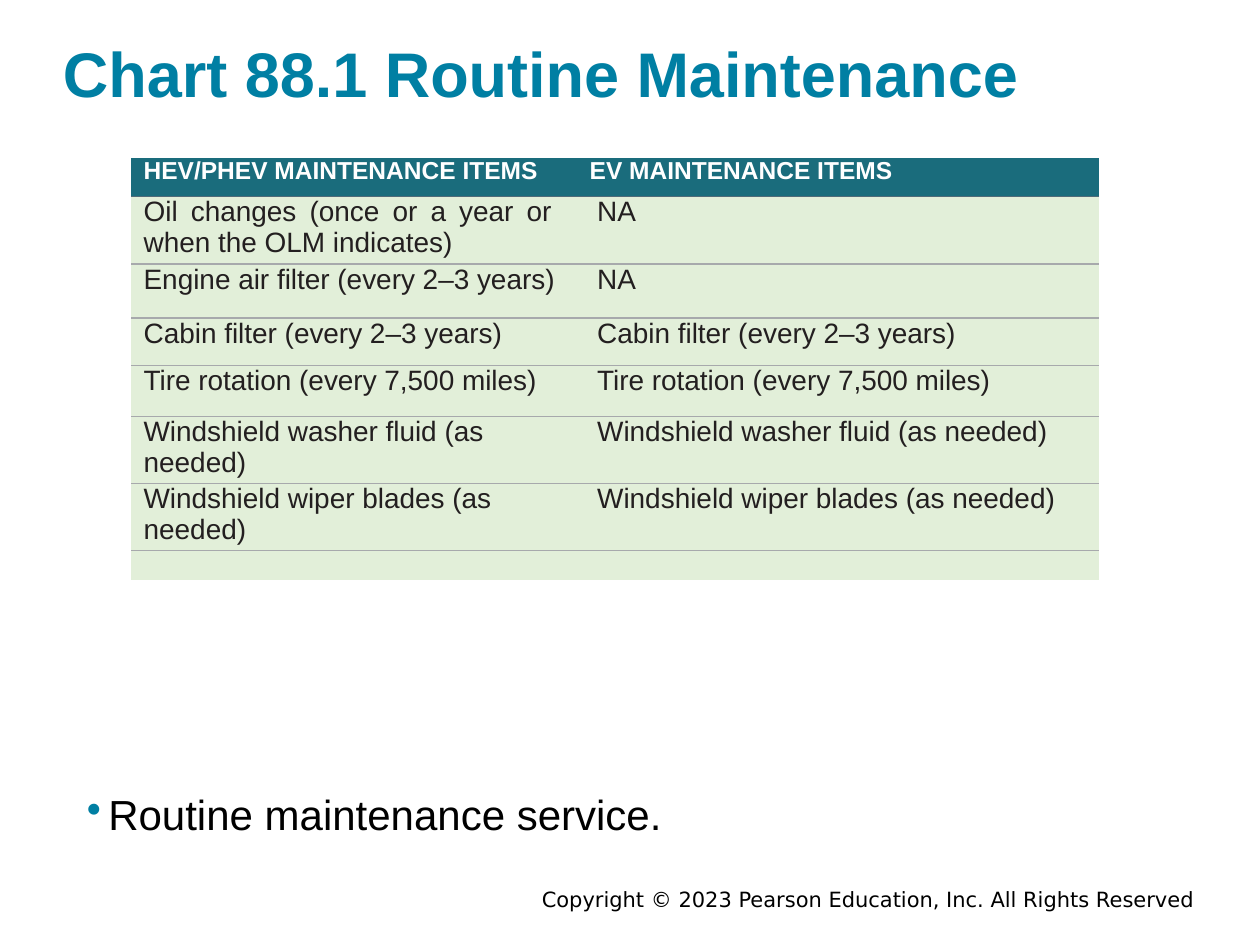
from lxml.etree import SubElement as Sub
from pptx import Presentation
from pptx.dml.color import RGBColor as RGB
from pptx.enum.text import MSO_ANCHOR as Anchor, PP_ALIGN as Align
from pptx.oxml import parse_xml
from pptx.oxml.ns import nsdecls, qn
from pptx.util import Inches, Pt

HUES = {"blue": "007FA3", "teal": "1A6C7C", "mint": "E2EFD9", "slate": "4F6B79",
        "gray": "A7A9AC", "ink": "231F20", "white": "FFFFFF", "black": "000000"}
PLAIN = "{2D5ABB26-0587-4C30-8999-92F81FD0307C}"
HEAD = ["HEV/PHEV MAINTENANCE ITEMS", "EV MAINTENANCE ITEMS"]
CABIN = "Cabin filter (every 2–3 years)"
TIRES = "Tire rotation (every 7,500 miles)"
FLUID = "Windshield washer fluid (as needed)"
WIPERS = "Windshield wiper blades (as needed)"
ITEMS = [
    ["Oil changes (once or a year or when the OLM indicates)", "NA"],
    ["Engine air filter (every 2–3 years)", "NA"],
    *([item, item] for item in (CABIN, TIRES, FLUID, WIPERS)),
    ["", ""],
]
COLS = [35.9, 40.9]
ROWS = [4.13, 7.13, 5.73, 5, 5.4, 7.07, 7.07, 3.13]


class Deck:
    """Lengths are in a grid of 100 columns by 100 rows over the slide."""

    def __init__(self, wide=10, high=7.5, font="Arial"):
        self.file = Presentation()
        self.file.slide_width, self.file.slide_height = Inches(wide), Inches(high)
        self.col, self.row = Inches(wide) / 100, Inches(high) / 100
        self.font = font
        self.slide = self.file.slides.add_slide(self.file.slide_layouts[6])

    def area(self, x, y, w, h):
        return [int(n) for n in (x * self.col, y * self.row, w * self.col, h * self.row)]

    def run(self, para, words, size, hue, bold=False, font=None):
        run = para.add_run()
        run.text = words
        run.font.name, run.font.size, run.font.bold = font or self.font, Pt(size), bold
        run.font.color.rgb = RGB.from_string(HUES[hue])

    def text(self, box, words, size, hue, side=0, align=Align.LEFT, dot=None, **style):
        frame = self.slide.shapes.add_textbox(*self.area(*box)).text_frame
        frame.word_wrap, frame.vertical_anchor = True, Anchor.MIDDLE
        frame.margin_left = frame.margin_right = Inches(side)
        frame.margin_top = frame.margin_bottom = Inches(0.02)
        para = frame.paragraphs[0]
        para.alignment = align
        if dot:
            self.bullet(para, dot)
        self.run(para, words, size, hue, **style)

    def bullet(self, para, hue):
        props = para._p.get_or_add_pPr()
        props.set("marL", str(Inches(0.28)))
        props.set("indent", str(Inches(-0.17)))
        Sub(Sub(props, qn("a:buClr")), qn("a:srgbClr"), val=HUES[hue])
        Sub(props, qn("a:buChar"), char="•")

    def rule(self, cell, edge, hue):
        line = parse_xml(
            f'<a:{edge} {nsdecls("a")} w="{Pt(1)}"><a:solidFill>'
            f'<a:srgbClr val="{HUES[hue]}"/></a:solidFill></a:{edge}>')
        cell._tc.get_or_add_tcPr().insert(0, line)

    def cell(self, cell, words, fill, left, **style):
        cell.margin_top = cell.margin_bottom = cell.margin_right = 0
        cell.margin_left = Inches(left)
        cell.fill.solid()
        cell.fill.fore_color.rgb = RGB.from_string(HUES[fill])
        para = cell.text_frame.paragraphs[0]
        if words:
            self.run(para, words, **style)
        else:
            Sub(para._p, qn("a:endParaRPr"), sz="1000")

    def table(self, x, y, cols, rows, head, items):
        box = self.area(x, y, sum(cols), sum(rows))
        grid = self.slide.shapes.add_table(len(rows), len(cols), *box).table
        grid._tbl.tblPr.find(qn("a:tableStyleId")).text = PLAIN
        grid.horz_banding = False
        for part, w in zip(grid.columns, cols):
            part.width = int(w * self.col)
        for part, h in zip(grid.rows, rows):
            part.height = int(h * self.row)
        for c, words in enumerate(head):
            self.cell(grid.cell(0, c), words, "teal", (0.1, 0.05)[c],
                      size=14, hue="white", bold=True)
        for r, line in enumerate(items, 1):
            for c, words in enumerate(line):
                self.cell(grid.cell(r, c), words, "mint", (0.1, 0.11)[c],
                          size=16, hue="ink")
                hue = "slate" if r == 1 else "gray"
                self.rule(grid.cell(r - 1, c), "lnB", hue)
                self.rule(grid.cell(r, c), "lnT", hue)
        return grid


def main():
    deck = Deck()
    deck.text((17.5, 93.73, 78.3, 2.93), "Copyright © 2023 Pearson Education, Inc. All Rights Reserved",
              12, "black", side=0.1, align=Align.RIGHT, font="DejaVu Sans")
    deck.text((5, 3.33, 90, 8.67), "Chart 88.1 Routine Maintenance", 36, "blue", bold=True)
    deck.text((5.8, 83.2, 90, 5.87), "Routine maintenance service.", 24, "black", dot="blue")
    grid = deck.table(10.4, 16.67, COLS, ROWS, HEAD, ITEMS)
    oil = grid.cell(1, 0)
    oil.margin_right = Inches(0.25)
    oil.text_frame.paragraphs[0].alignment = Align.JUSTIFY
    deck.file.save("out.pptx")


if __name__ == "__main__":
    main()
